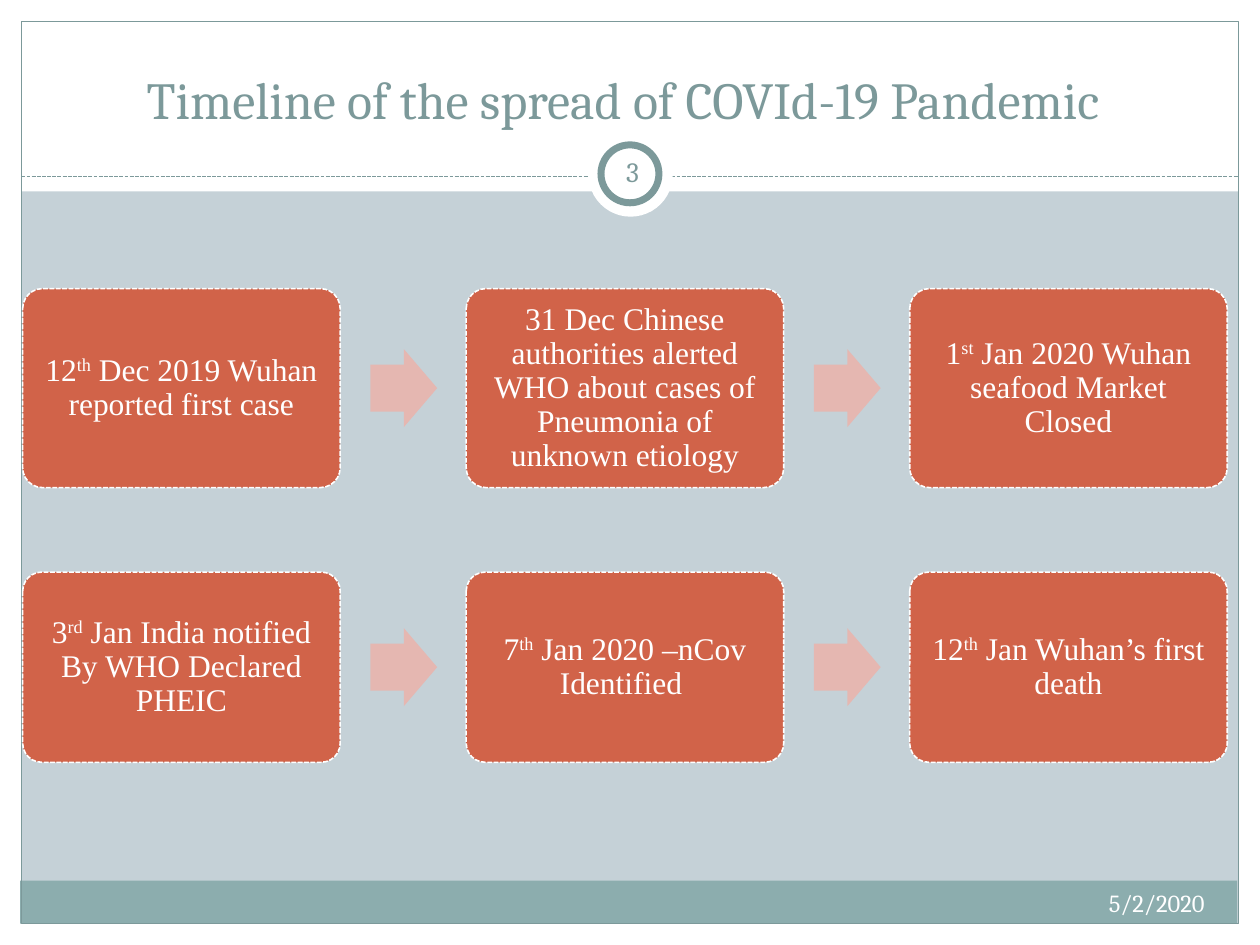
from lxml import etree
from pptx import Presentation
from pptx import util as u
from pptx.dml.color import RGBColor
from pptx.enum import dml, shapes, text
from pptx.oxml.ns import qn

COLORS = {
    "background": "C5D1D7",
    "white": "FFFFFF",
    "footer": "8CADAE",
    "accent": "7C999A",
    "card": "D16349",
    "arrow": "E5B7B1",
}
HEADING_FONT = "Cambria"
CARD_FONT = "Times New Roman"
SHAPE = shapes.MSO_SHAPE
ALIGN = text.PP_ALIGN
ANCHOR = text.MSO_ANCHOR

CARD_LEFT, CARD_PITCH, CARD_WIDTH = 0.18, 3.52, 2.52
ARROW_LEFT, ARROW_WIDTH, ARROW_HEIGHT = 2.94, 0.53, 0.62

TIMELINE = [
    (2.29, 1.58, [
        ("12", "th", " Dec 2019 Wuhan reported first case"),
        ("31 Dec Chinese authorities alerted WHO about cases of "
         "Pneumonia of unknown etiology",),
        ("1", "st", " Jan 2020 Wuhan seafood Market Closed"),
    ]),
    (4.54, 1.51, [
        ("3", "rd", " Jan India notified By WHO Declared PHEIC"),
        ("7", "th", " Jan 2020 –nCov Identified "),
        ("12", "th", " Jan Wuhan’s first death"),
    ]),
]


def color(name):
    return RGBColor.from_string(COLORS[name])


def box(at):
    return [u.Inches(length) for length in at]


def style_line(line, name, width, dashed=False):
    line.color.rgb = color(name)
    line.width = u.Pt(width)
    if dashed:
        line.dash_style = dml.MSO_LINE.SQUARE_DOT


def add_block(slide, kind, at, fill=None, line=None, width=0.75, dashed=False):
    block = slide.shapes.add_shape(kind, *box(at))
    block.shadow.inherit = False
    if fill:
        block.fill.solid()
        block.fill.fore_color.rgb = color(fill)
    else:
        block.fill.background()
    if line:
        style_line(block.line, line, width, dashed)
    else:
        block.line.fill.background()
    return block


def add_run(paragraph, words, font, size, name, raised=False):
    run = paragraph.add_run()
    run.text = words
    run.font.name = font
    run.font.size = u.Pt(size)
    run.font.color.rgb = color(name)
    if raised:
        run._r.get_or_add_rPr().set("baseline", "30000")


def set_frame(frame, anchor, align, inset_x, inset_y):
    frame.word_wrap = True
    frame.auto_size = text.MSO_AUTO_SIZE.NONE
    frame.vertical_anchor = anchor
    frame.margin_left = frame.margin_right = u.Inches(inset_x)
    frame.margin_top = frame.margin_bottom = u.Inches(inset_y)
    paragraph = frame.paragraphs[0]
    paragraph.alignment = align
    return paragraph


def add_label(slide, at, words, size, name, anchor, align, inset_x):
    label = slide.shapes.add_textbox(*box(at))
    paragraph = set_frame(label.text_frame, anchor, align, inset_x, 0.05)
    add_run(paragraph, words, HEADING_FONT, size, name)


def add_divider(slide, left, right, top):
    divider = slide.shapes.add_connector(
        shapes.MSO_CONNECTOR.STRAIGHT, *box((left, top, right, top)))
    style_line(divider.line, "accent", 0.75, True)
    etree.SubElement(divider._element.spPr, qn("a:effectLst"))


def add_backdrop(slide):
    slide.background.fill.solid()
    slide.background.fill.fore_color.rgb = color("background")
    for margin in [(0, 7.33, 10, 0.17), (0, 0, 10, 1.52),
                   (0, 0, 0.17, 7.5), (9.83, 0, 0.17, 7.5)]:
        add_block(slide, SHAPE.RECTANGLE, margin, "white")
    add_block(slide, SHAPE.RECTANGLE, (0.16, 6.99, 9.66, 0.34), "footer")
    add_block(slide, SHAPE.RECTANGLE, (0.17, 0.17, 9.66, 7.16), line="accent")
    add_divider(slide, 0.17, 9.83, 1.4)
    add_block(slide, SHAPE.OVAL, (4.67, 1.05, 0.67, 0.67), "white")
    add_block(slide, SHAPE.OVAL, (4.77, 1.15, 0.46, 0.46), "white", "accent", 4)


def set_title(slide, words):
    title = slide.shapes.title
    title.left, title.top, title.width, title.height = box((0.33, 0.25, 9.33, 0.83))
    paragraph = set_frame(title.text_frame, ANCHOR.BOTTOM, ALIGN.CENTER, 0.1, 0.05)
    add_run(paragraph, words, HEADING_FONT, 29.7, "accent")
    slide.shapes._spTree.append(title._element)


def add_card(slide, at, parts):
    card = add_block(slide, SHAPE.ROUNDED_RECTANGLE, at, "card", "white", 0.9, True)
    card.adjustments[0] = 0.1
    paragraph = set_frame(card.text_frame, ANCHOR.MIDDLE, ALIGN.CENTER, 0.07, 0.07)
    paragraph.line_spacing = 0.9
    for index, part in enumerate(parts):
        add_run(paragraph, part, CARD_FONT, 18, "white", raised=index == 1)


def add_arrow(slide, left, middle):
    arrow = add_block(
        slide, SHAPE.RIGHT_ARROW,
        (left, middle - ARROW_HEIGHT / 2, ARROW_WIDTH, ARROW_HEIGHT), "arrow")
    arrow.adjustments[0] = 0.6
    arrow.adjustments[1] = 0.5


def add_timeline_row(slide, top, height, events):
    for column, parts in enumerate(events):
        offset = column * CARD_PITCH
        add_card(slide, (CARD_LEFT + offset, top, CARD_WIDTH, height), parts)
        if column < len(events) - 1:
            add_arrow(slide, ARROW_LEFT + offset, top + height / 2)


def main():
    deck = Presentation()
    deck.slide_width, deck.slide_height = u.Inches(10), u.Inches(7.5)
    slide = deck.slides.add_slide(deck.slide_layouts[5])
    add_backdrop(slide)
    set_title(slide, "Timeline of the spread of COVId-19 Pandemic ")
    for top, height, events in TIMELINE:
        add_timeline_row(slide, top, height, events)
    add_label(slide, (6.33, 7, 3.33, 0.4), "5/2/2020", 14, "white",
              ANCHOR.TOP, ALIGN.RIGHT, 0.1)
    add_label(slide, (4.77, 1.12, 0.5, 0.48), "3", 16, "accent",
              ANCHOR.MIDDLE, ALIGN.CENTER, 0.05)
    deck.save("out.pptx")


if __name__ == "__main__":
    main()
